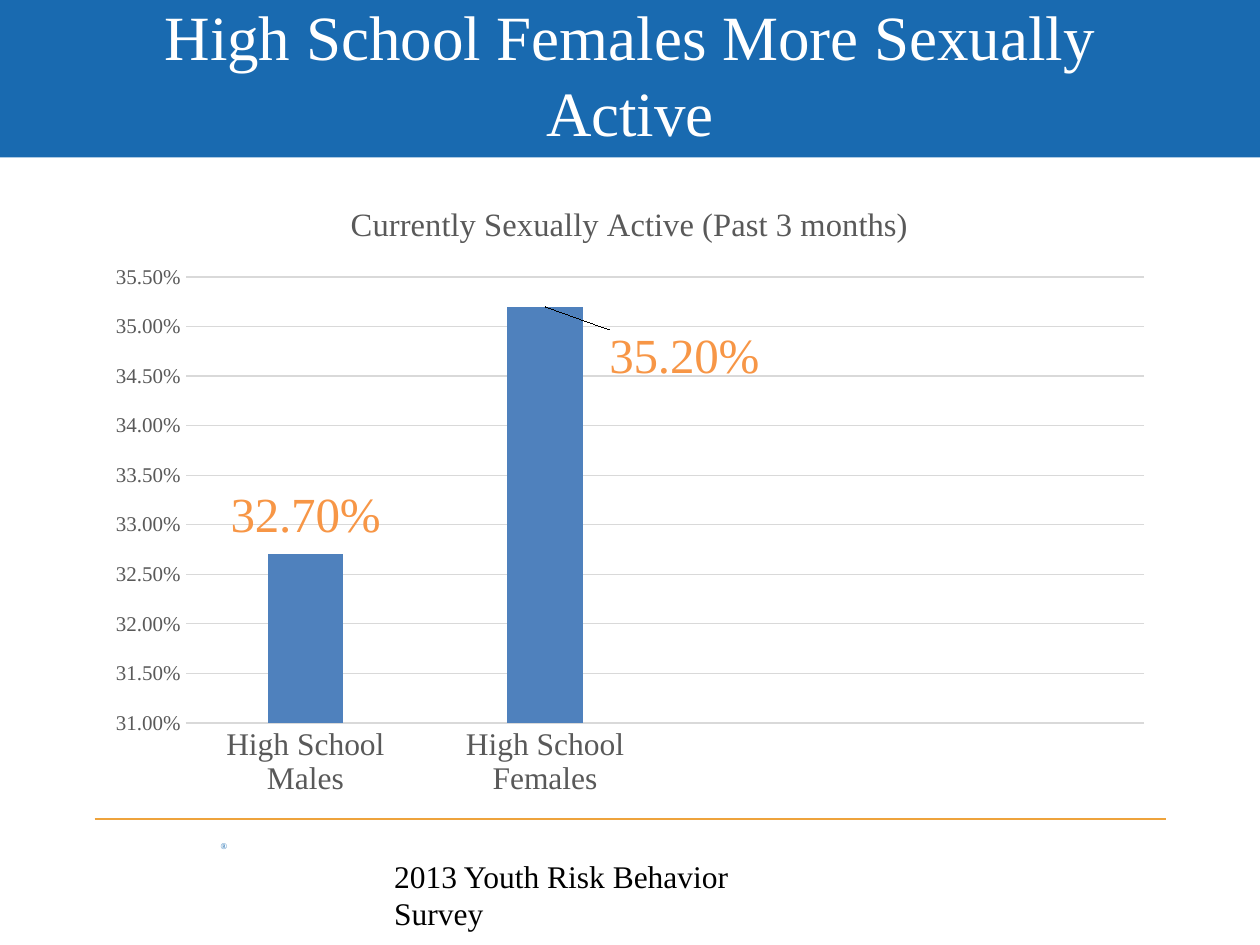
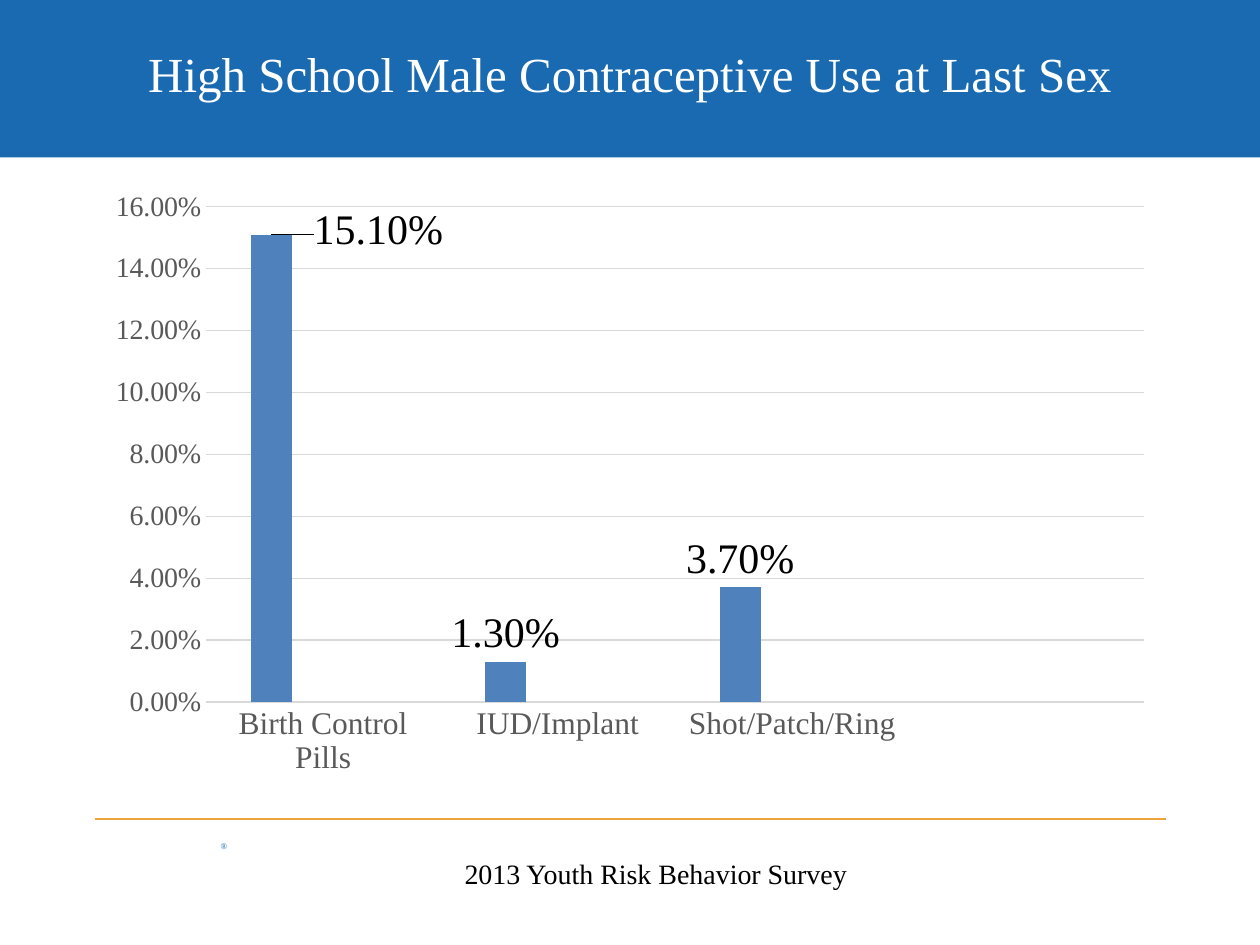
"""Builds two slides of survey results, each with a column chart under a title band."""
from dataclasses import dataclass

from lxml.etree import SubElement
from pptx import Presentation
from pptx.chart.data import CategoryChartData
from pptx.dml.color import RGBColor
from pptx.enum.chart import XL_CHART_TYPE, XL_LABEL_POSITION, XL_TICK_MARK
from pptx.enum.shapes import MSO_CONNECTOR, MSO_SHAPE
from pptx.enum.text import MSO_ANCHOR, PP_ALIGN
from pptx.oxml import parse_xml
from pptx.oxml.ns import nsdecls, qn
from pptx.util import Inches, Pt


@dataclass(frozen=True)
class Theme:
    font: str = "Times New Roman"
    band: str = "196AB0"
    rule: str = "EEA33C"
    white: str = "FFFFFF"
    black: str = "000000"
    grey: str = "595959"
    grid: str = "D9D9D9"
    orange: str = "F79646"
    series: tuple = ("4F81BD", "F79646", "9BBB59")
    mark_size: float = 5
    chart_size: float = 10
    category_size: float = 18
    chart_title_size: float = 18.6


class Deck:
    def __init__(self, theme):
        self.theme = theme
        self.prs = Presentation()
        self.prs.slide_width, self.prs.slide_height = Inches(10), Inches(7.5)
        self.slide = None

    def style(self, font, size, color):
        font.name, font.size = self.theme.font, Pt(size)
        font.color.rgb = RGBColor.from_string(color)

    def line(self, line, color):
        line.color.rgb = RGBColor.from_string(color)
        line.width = Pt(0.75)

    def text(self, words, box, size, color, align=PP_ALIGN.LEFT, anchor=MSO_ANCHOR.TOP, inset=None):
        frame = self.slide.shapes.add_textbox(*map(Inches, box)).text_frame
        frame.word_wrap, frame.vertical_anchor = True, anchor
        if inset is not None:
            frame.margin_left = frame.margin_right = Inches(inset)
            frame.margin_top = frame.margin_bottom = Inches(inset)
        paragraph = frame.paragraphs[0]
        paragraph.text, paragraph.alignment = words, align
        self.style(paragraph.font, size, color)

    def new_slide(self, title, title_size):
        theme = self.theme
        self.slide = self.prs.slides.add_slide(self.prs.slide_layouts[6])
        shapes = self.slide.shapes
        band = shapes.add_shape(MSO_SHAPE.RECTANGLE, 0, 0, self.prs.slide_width, Inches(1.25))
        band.shadow.inherit = False
        band.fill.solid()
        band.fill.fore_color.rgb = RGBColor.from_string(theme.band)
        band.line.fill.background()
        self.text("®", (1.75, 6.67, 0.25, 0.08), theme.mark_size, theme.band, inset=0)
        footer_rule = shapes.add_connector(
            MSO_CONNECTOR.STRAIGHT, Inches(0.75), Inches(6.5), Inches(9.25), Inches(6.5))
        self.line(footer_rule.line, theme.rule)
        SubElement(footer_rule._element.spPr, qn("a:effectLst"))
        self.text(title, (0.5, 0.08, 9, 1), title_size, theme.white,
                  PP_ALIGN.CENTER, MSO_ANCHOR.MIDDLE)

    def chart(self, height, categories, series, scale, value_size, label_size, label_color,
              label_shifts, title=None):
        theme = self.theme
        data = CategoryChartData(number_format="0.00%")
        data.categories = categories
        for name, values in series:
            data.add_series(name, values)
        chart = self.slide.shapes.add_chart(
            XL_CHART_TYPE.COLUMN_CLUSTERED, Inches(0.75), Inches(1.42),
            Inches(8.5), Inches(height), data).chart
        self.style(chart.font, theme.chart_size, theme.black)
        chart.has_legend = False
        chart.has_title = title is not None
        if title:
            heading = chart.chart_title.text_frame
            heading.text = title
            self.style(heading.paragraphs[0].font, theme.chart_title_size, theme.grey)
            heading.paragraphs[0].font.bold = False
        self.axes(chart, scale, value_size)

        plot = chart.plots[0]
        plot.gap_width, plot.overlap, plot.vary_by_categories = 219, -27, False
        for columns, color in zip(plot.series, theme.series):
            columns.format.fill.solid()
            columns.format.fill.fore_color.rgb = RGBColor.from_string(color)
        self.labels(plot.series[0], label_size, label_color, label_shifts)

    def axes(self, chart, scale, value_size):
        theme = self.theme
        category, value = chart.category_axis, chart.value_axis
        for axis, size in ((category, theme.category_size), (value, value_size)):
            axis.major_tick_mark = axis.minor_tick_mark = XL_TICK_MARK.NONE
            self.style(axis.tick_labels.font, size, theme.grey)
        self.line(category.format.line, theme.grid)
        value.format.line.fill.background()
        value.minimum_scale, value.maximum_scale, value.major_unit = scale
        value.has_major_gridlines = True
        self.line(value.major_gridlines.format.line, theme.grid)
        value.tick_labels.number_format = "0.00%"
        value.tick_labels.number_format_is_linked = False

    def labels(self, columns, size, color, shifts):
        labels = columns.data_labels
        labels.show_value = True
        labels.number_format, labels.number_format_is_linked = "0.00%", False
        labels.position = XL_LABEL_POSITION.OUTSIDE_END
        self.style(labels.font, size, color)
        for index, (right, down) in shifts.items():
            label = columns.points[index].data_label
            self.style(label.font, size, color)
            label.position = XL_LABEL_POSITION.OUTSIDE_END
            entry = labels._element.find(f"{qn('c:dLbl')}[{index + 1}]")
            entry.find(qn("c:idx")).addnext(parse_xml(
                f'<c:layout {nsdecls("c")}><c:manualLayout>'
                f'<c:x val="{right}"/><c:y val="{down}"/></c:manualLayout></c:layout>'))


def main():
    theme = Theme()
    deck = Deck(theme)
    source = "2013 Youth Risk Behavior Survey"
    activity = "Currently Sexually Active (Past 3 months)"

    deck.new_slide("High School Females More Sexually Active", 36)
    deck.chart(5, ["High School Males", "High School Females", "", ""],
               [(activity, (0.327, 0.352, None, None))], (0.31, 0.355, 0.005),
               12, 28, theme.orange, {0: (0, -0.01), 1: (0.13, 0.13)}, activity)
    deck.text(source, (3.03, 6.75, 3.48, 0.4), 18, theme.black)

    deck.new_slide("High School Male Contraceptive Use at Last Sex", 28)
    deck.text(source, (2.08, 6.75, 6.25, 0.37), 16, theme.black, PP_ALIGN.CENTER)
    deck.chart(4.83, ["Birth Control Pills", "IUD/Implant", "Shot/Patch/Ring", ""],
               [("Series 1", (0.151, 0.013, 0.037, None)),
                ("Series 2", (None,) * 4), ("Series 3", (None,) * 4)],
               (0, 0.16, 0.02), 16, 24, theme.black, {0: (0.1, 0.04)})

    deck.prs.save("out.pptx")


if __name__ == "__main__":
    main()
